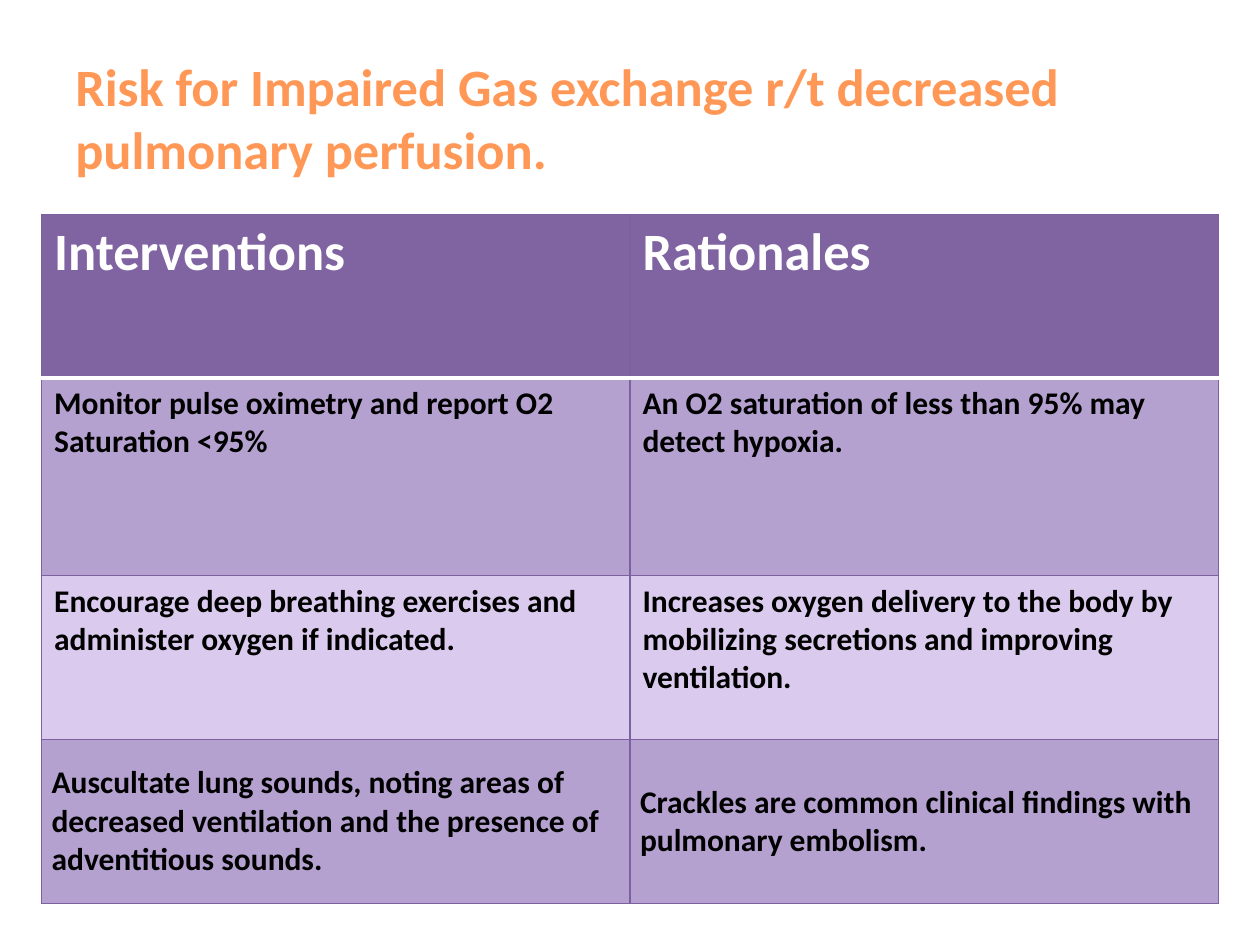
from dataclasses import dataclass

import lxml.etree
import pptx
import pptx.dml.color
import pptx.enum.text
import pptx.oxml.ns
import pptx.util

Inches = pptx.util.Inches
Pt = pptx.util.Pt
RGBColor = pptx.dml.color.RGBColor
MSO_ANCHOR = pptx.enum.text.MSO_ANCHOR
qn = pptx.oxml.ns.qn

FONT = "Calibri"
ORANGE = RGBColor(0xFF, 0x98, 0x56)
WHITE = RGBColor(0xFF, 0xFF, 0xFF)
BLACK = RGBColor(0x00, 0x00, 0x00)
PURPLE = RGBColor(0x80, 0x64, 0xA2)
MID_PURPLE = RGBColor(0xB4, 0xA1, 0xCF)
PALE_PURPLE = RGBColor(0xDA, 0xCA, 0xED)
BORDER = RGBColor(0x7D, 0x60, 0xA0)


@dataclass(frozen=True)
class RowStyle:
    height: float
    fill: RGBColor
    color: RGBColor = BLACK
    size: float = 18
    anchor: MSO_ANCHOR = MSO_ANCHOR.TOP
    margin_x: float = 0.1
    margin_y: float = 0.05


@dataclass(frozen=True)
class CareRow:
    intervention: str
    rationale: str
    style: RowStyle


ROWS = [
    CareRow("Interventions", "Rationales", RowStyle(1.3, PURPLE, WHITE, 30)),
    CareRow(
        "Monitor pulse oximetry and report O2 Saturation <95%",
        "An O2 saturation of less than 95% may detect hypoxia.",
        RowStyle(1.57, MID_PURPLE),
    ),
    CareRow(
        "Encourage deep breathing exercises and administer oxygen if indicated.",
        "Increases oxygen delivery to the body by mobilizing secretions and improving ventilation.",
        RowStyle(1.3, PALE_PURPLE),
    ),
    CareRow(
        "Auscultate lung sounds, noting areas of decreased ventilation and the presence of adventitious sounds.",
        "Crackles are common clinical findings with pulmonary embolism.",
        RowStyle(1.3, MID_PURPLE, anchor=MSO_ANCHOR.MIDDLE, margin_x=0.08, margin_y=0.02),
    ),
]


def add_run(tf, text: str, size: float, color: RGBColor) -> None:
    r = tf.paragraphs[0].add_run()
    r.text = text
    r.font.name = FONT
    r.font.size = Pt(size)
    r.font.bold = True
    r.font.color.rgb = color


def add_title(s, text: str) -> None:
    sp = s.shapes.add_textbox(Inches(0.5), Inches(0.3), Inches(9), Inches(1.25))
    tf = sp.text_frame
    tf.word_wrap = True
    tf.vertical_anchor = MSO_ANCHOR.MIDDLE
    add_run(tf, text, 30, ORANGE)


def set_border(cell, side: str, color: RGBColor, width: float) -> None:
    tc_pr = cell._tc.get_or_add_tcPr()
    ln = lxml.etree.SubElement(tc_pr, qn(f"a:{side}"), w=str(Pt(width)))
    fill = lxml.etree.SubElement(ln, qn("a:solidFill"))
    lxml.etree.SubElement(fill, qn("a:srgbClr"), val=str(color))


def fill_cell(cell, text: str, style: RowStyle, top: tuple, bottom: tuple) -> None:
    thin = (BORDER, 0.75)
    for side, line in zip(("lnL", "lnR", "lnT", "lnB"), (thin, thin, top, bottom)):
        set_border(cell, side, *line)
    cell.fill.solid()
    cell.fill.fore_color.rgb = style.fill
    cell.vertical_anchor = style.anchor
    cell.margin_left = cell.margin_right = Inches(style.margin_x)
    cell.margin_top = cell.margin_bottom = Inches(style.margin_y)
    add_run(cell.text_frame, text, style.size, style.color)


def add_care_table(s, rows: list[CareRow]) -> None:
    height = sum(row.style.height for row in rows)
    frame = s.shapes.add_table(
        len(rows), 2, Inches(0.33), Inches(1.7), Inches(9.34), Inches(height)
    )
    table = frame.table
    table.horz_banding = False
    thin, header_rule = (BORDER, 0.75), (WHITE, 2)
    for i, row in enumerate(rows):
        table.rows[i].height = Inches(row.style.height)
        top = header_rule if i == 1 else thin
        bottom = header_rule if i == 0 else thin
        for j, text in enumerate((row.intervention, row.rationale)):
            fill_cell(table.cell(i, j), text, row.style, top, bottom)


def main() -> None:
    prs = pptx.Presentation()
    prs.slide_width = Inches(10)
    prs.slide_height = Inches(7.5)
    s = prs.slides.add_slide(prs.slide_layouts[6])
    add_title(s, "Risk for Impaired Gas exchange r/t decreased pulmonary perfusion.")
    add_care_table(s, ROWS)
    prs.save("out.pptx")


if __name__ == "__main__":
    main()
